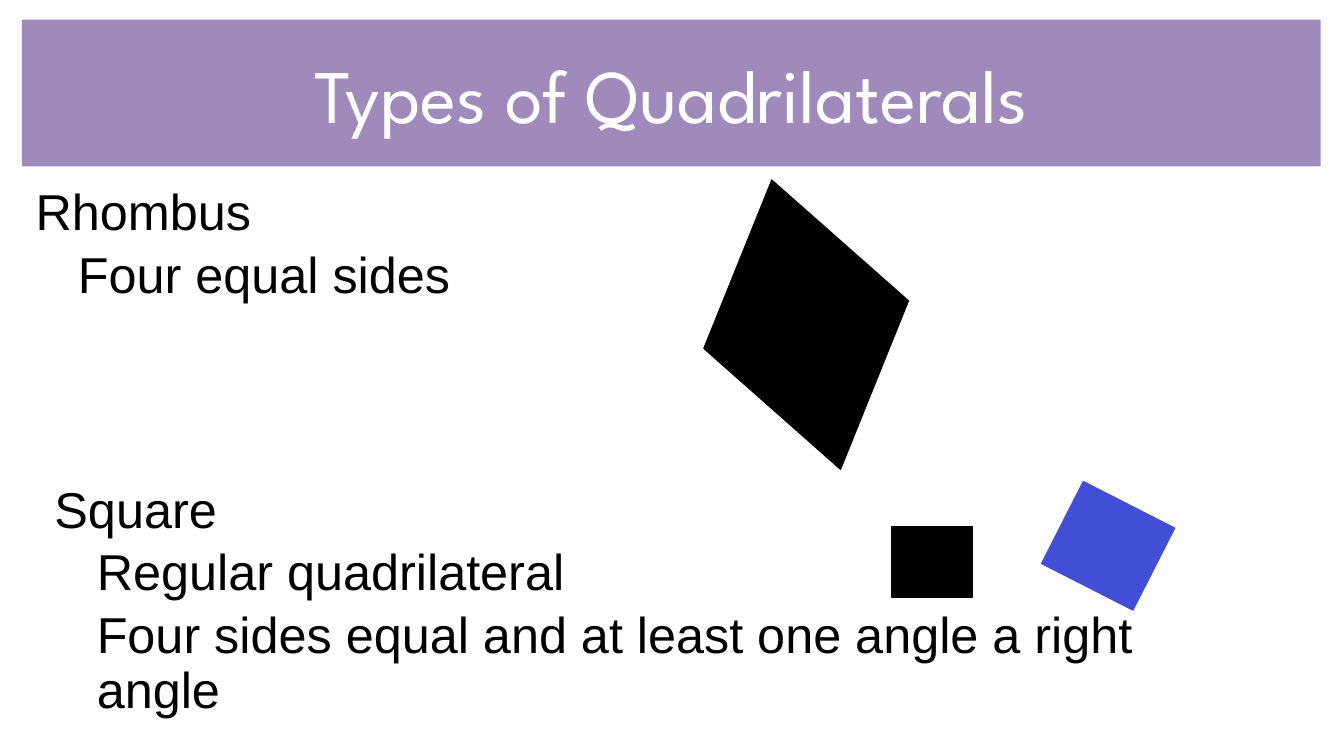
from pptx import Presentation
from pptx.dml.color import RGBColor
from pptx.enum.shapes import MSO_SHAPE
from pptx.enum.text import MSO_ANCHOR, MSO_AUTO_SIZE, PP_ALIGN
from pptx.oxml.ns import qn
from pptx.util import Inches, Pt
from lxml.etree import SubElement

BLACK = RGBColor(0x00, 0x00, 0x00)
WHITE = RGBColor(0xFF, 0xFF, 0xFF)
BLUE = RGBColor(0x43, 0x4E, 0xD6)
PURPLE = RGBColor(0xA0, 0x8A, 0xBC)


class QuadrilateralSlide:
    title_font = "League Spartan"
    body_font = "Arial"
    title_size = Pt(72)
    body_size = Pt(48)
    inset = Inches(0.04)
    indent = Inches(0.56)

    def __init__(self, deck):
        self.slide = deck.slides.add_slide(deck.slide_layouts.get_by_name("Two Content"))

    def frame(self, holder, box):
        holder.left, holder.top, holder.width, holder.height = map(Inches, box)
        frame = holder.text_frame
        frame.auto_size = MSO_AUTO_SIZE.NONE
        frame.word_wrap = True
        frame.vertical_anchor = MSO_ANCHOR.MIDDLE
        frame.margin_left = frame.margin_right = self.inset
        frame.margin_top = frame.margin_bottom = self.inset
        return frame

    def run(self, paragraph, text, font, size, color):
        run = paragraph.add_run()
        run.text = text
        run.font.name = font
        run.font.size = size
        run.font.color.rgb = color

    def title(self, text, box):
        banner = self.slide.shapes.title
        heading = self.frame(banner, box).paragraphs[0]
        banner.fill.solid()
        banner.fill.fore_color.rgb = PURPLE
        heading.alignment = PP_ALIGN.CENTER
        self.run(heading, text, self.title_font, self.title_size, WHITE)

    def definition(self, index, name, properties, box):
        frame = self.frame(self.slide.placeholders[index], box)
        for number, text in enumerate([name, *properties]):
            entry = frame.add_paragraph() if number else frame.paragraphs[0]
            entry.level = 1 if number else 0
            entry.line_spacing = 0.9
            entry.space_before = Pt(8 if number else 9)
            layout = entry._p.get_or_add_pPr()
            layout.set("marL", str(self.indent))
            layout.set("indent", str(0 if number else -self.indent))
            SubElement(layout, qn("a:buNone"))
            self.run(entry, text, self.body_font, self.body_size, BLACK)

    def paint(self, figure, color):
        figure.shadow.inherit = False
        figure.fill.solid()
        figure.fill.fore_color.rgb = color
        figure.line.color.rgb = color
        figure.line.width = Pt(1)

    def polygon(self, corners, color):
        start, *others = [(Inches(x), Inches(y)) for x, y in corners]
        outline = self.slide.shapes.build_freeform(*start)
        outline.add_line_segments(others, close=True)
        self.paint(outline.convert_to_shape(), color)

    def rectangle(self, box, color, rotation=0):
        figure = self.slide.shapes.add_shape(MSO_SHAPE.RECTANGLE, *map(Inches, box))
        figure.rotation = rotation
        self.paint(figure, color)


def main():
    deck = Presentation()
    deck.slide_width, deck.slide_height = Inches(17.78), Inches(10)
    page = QuadrilateralSlide(deck)
    page.title("Types of Quadrilaterals", (0.29, 0.26, 17.18, 1.94))
    page.definition(1, "Rhombus", ["Four equal sides"], (0.43, 2.44, 11.35, 1.63))
    page.definition(
        2,
        "Square",
        ["Regular quadrilateral", "Four sides equal and at least one angle a right angle"],
        (0.68, 6.37, 16.1, 3.18),
    )
    page.polygon([(9.31, 4.61), (11.12, 6.21), (12.02, 3.98), (10.21, 2.38)], BLACK)
    page.rectangle((13.98, 6.61, 1.36, 1.22), BLUE, rotation=27)
    page.rectangle((11.79, 6.97, 1.08, 0.93), BLACK)
    deck.save("out.pptx")


if __name__ == "__main__":
    main()
